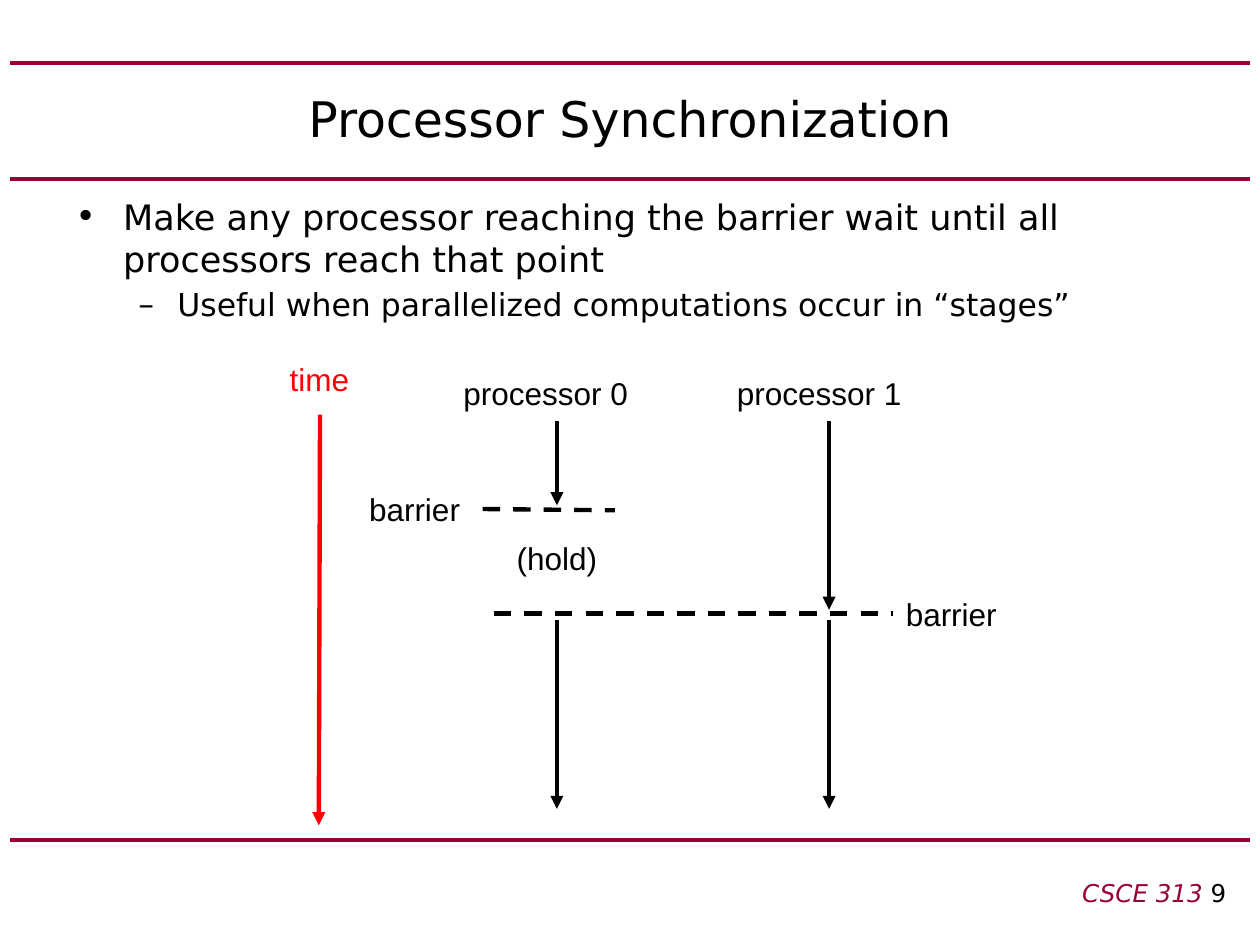
from pptx import Presentation
from pptx.dml.color import RGBColor
from pptx.enum.dml import MSO_LINE
from pptx.enum.shapes import MSO_CONNECTOR
from pptx.enum.text import MSO_ANCHOR as Anchor, PP_ALIGN as Align
from pptx.oxml.ns import qn
from pptx.util import Inches, Pt
from lxml.etree import SubElement

COLORS = {"black": "000000", "maroon": "990033", "red": "FF0000"}
SANS = "DejaVu Sans"


def style(font, color="black", **values):
    """Set the colour and the given attributes of a font."""
    font.color.rgb = RGBColor.from_string(COLORS[color])
    for name, value in values.items():
        setattr(font, name, value)


def add_box(slide, left, top, width, height, anchor=Anchor.TOP):
    """Add a wrapping text box and return its frame."""
    frame = slide.shapes.add_textbox(*map(Inches, (left, top, width, height))).text_frame
    frame.word_wrap = True
    frame.vertical_anchor = anchor
    return frame


def add_label(slide, text, left, top, width, height, size=18, face="Arial",
              color="black", align=Align.CENTER, anchor=Anchor.TOP):
    """Add a one-paragraph label."""
    para = add_box(slide, left, top, width, height, anchor).paragraphs[0]
    para.text = text
    para.alignment = align
    style(para.runs[0].font, color, size=Pt(size), name=face)
    return para


def add_line(slide, start, end, color="black", width=2.5, dash=False, arrow=False):
    """Draw a straight line, dashed or with an arrowhead at its end."""
    line = slide.shapes.add_connector(MSO_CONNECTOR.STRAIGHT, *map(Inches, start + end))
    line.line.width = Pt(width)
    line.line.color.rgb = RGBColor.from_string(COLORS[color])
    if dash:
        line.line.dash_style = MSO_LINE.DASH
    props = line.element.spPr
    if arrow:
        SubElement(props.find(qn("a:ln")), qn("a:tailEnd"), type="triangle")
    SubElement(props, qn("a:effectLst"))


def add_bullet(para, text, mark, left, hang, size, before=0):
    """Fill a paragraph with bulleted text on a hanging indent."""
    props = para._p.get_or_add_pPr()
    props.set("marL", str(Inches(left)))
    props.set("indent", str(-Inches(hang)))
    para.space_before = Pt(before)
    SubElement(props, qn("a:buFont"), typeface=SANS)
    SubElement(props, qn("a:buChar"), char=mark)
    para.text = text
    style(para.runs[0].font, size=Pt(size), name=SANS)


def add_frame(slide):
    """Add the rules, the title and the footer."""
    for y in (6.67, 1.42, 0.5):
        add_line(slide, (0.08, y), (9.92, y), "maroon", 2.25)
    add_label(slide, "Processor Synchronization", 0.5, 0.5, 9, 0.87, 28, SANS,
              anchor=Anchor.MIDDLE)
    foot = add_label(slide, "CSCE 313 ", 3.75, 6.92, 6.08, 0.33, 14, SANS,
                     "maroon", Align.RIGHT)
    foot.runs[0].font.italic = True
    page = foot.add_run()
    page.text = "9"
    style(page.font, size=Pt(14), name=SANS)


def add_body(slide):
    """Add the two bulleted statements."""
    body = add_box(slide, 0.5, 1.5, 9, 1.17)
    add_bullet(body.paragraphs[0], "Make any processor reaching the barrier wait "
               "until all processors reach that point", "•", 0.38, 0.38, 20)
    para = body.add_paragraph()
    para.level = 1
    add_bullet(para, "Useful when parallelized computations occur in “stages”",
               "–", 0.81, 0.31, 18, 3.6)


def add_chart(slide):
    """Draw the time axis, both processors and their barriers."""
    add_label(slide, "time", 1.7, 2.81, 1.67, 0.42, color="red")
    add_line(slide, (2.54, 3.29), (2.53, 6.55), "red", arrow=True)
    for name, left, x, stop in (("processor 0", 3.58, 4.42, 4.01),
                                ("processor 1", 5.75, 6.58, 4.84)):
        add_label(slide, name, left, 2.92, 1.67, 0.42, align=Align.LEFT)
        for top, end in ((3.34, stop), (4.92, 6.42)):
            add_line(slide, (x, top), (x, end), arrow=True)
    for text, left, top, width in (("barrier", 2.75, 3.84, 1.08),
                                   ("barrier", 7.01, 4.67, 1.08),
                                   ("(hold)", 3.92, 4.23, 1)):
        add_label(slide, text, left, top, width, 0.4)
    add_line(slide, (3.83, 4.04), (4.88, 4.05), dash=True)
    add_line(slide, (3.92, 4.87), (7.09, 4.87), dash=True)


def main():
    """Build the slide and save it."""
    deck = Presentation()
    deck.slide_width, deck.slide_height = Inches(10), Inches(7.5)
    slide = deck.slides.add_slide(deck.slide_layouts[6])
    add_frame(slide)
    add_body(slide)
    add_chart(slide)
    deck.save("out.pptx")


if __name__ == "__main__":
    main()
